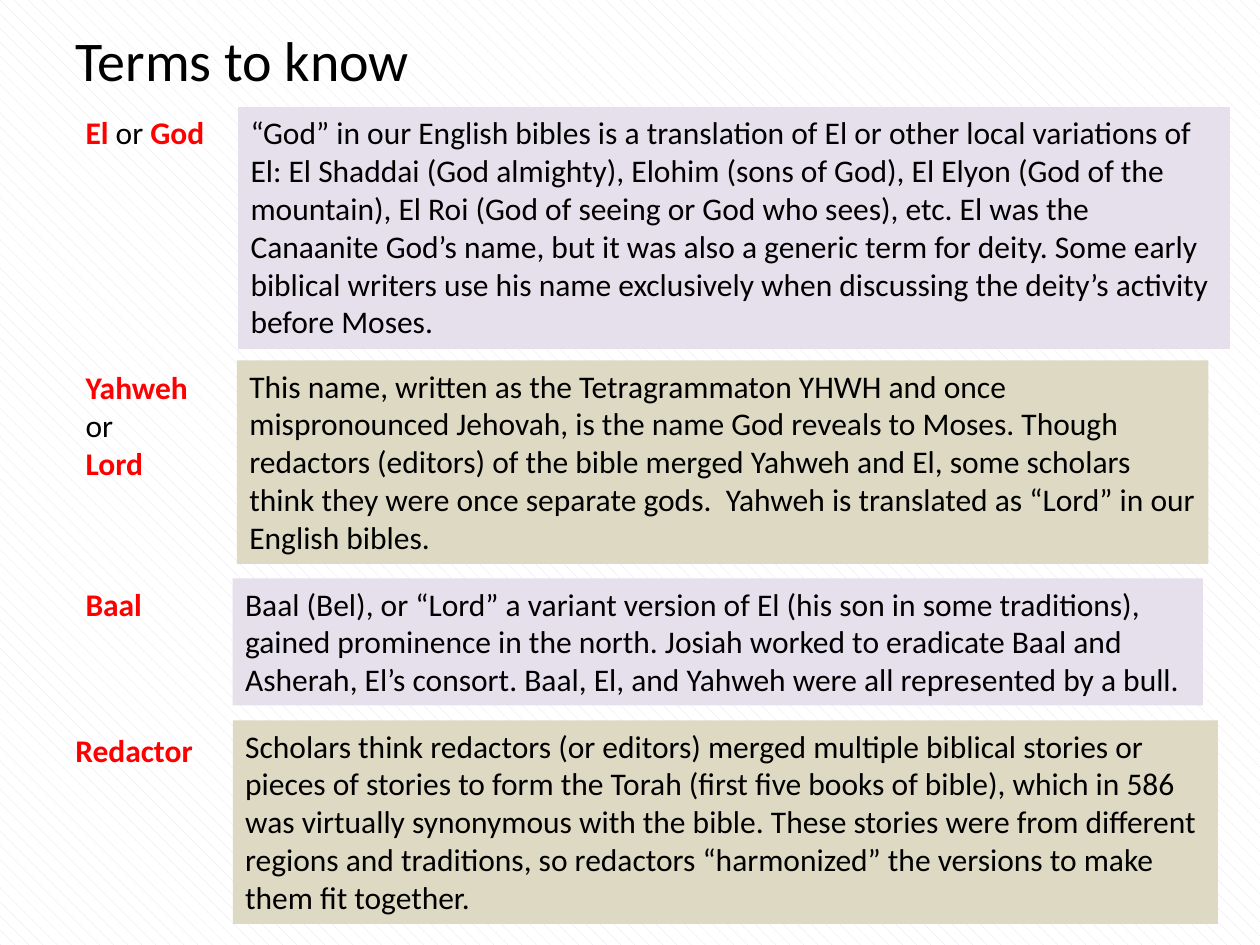
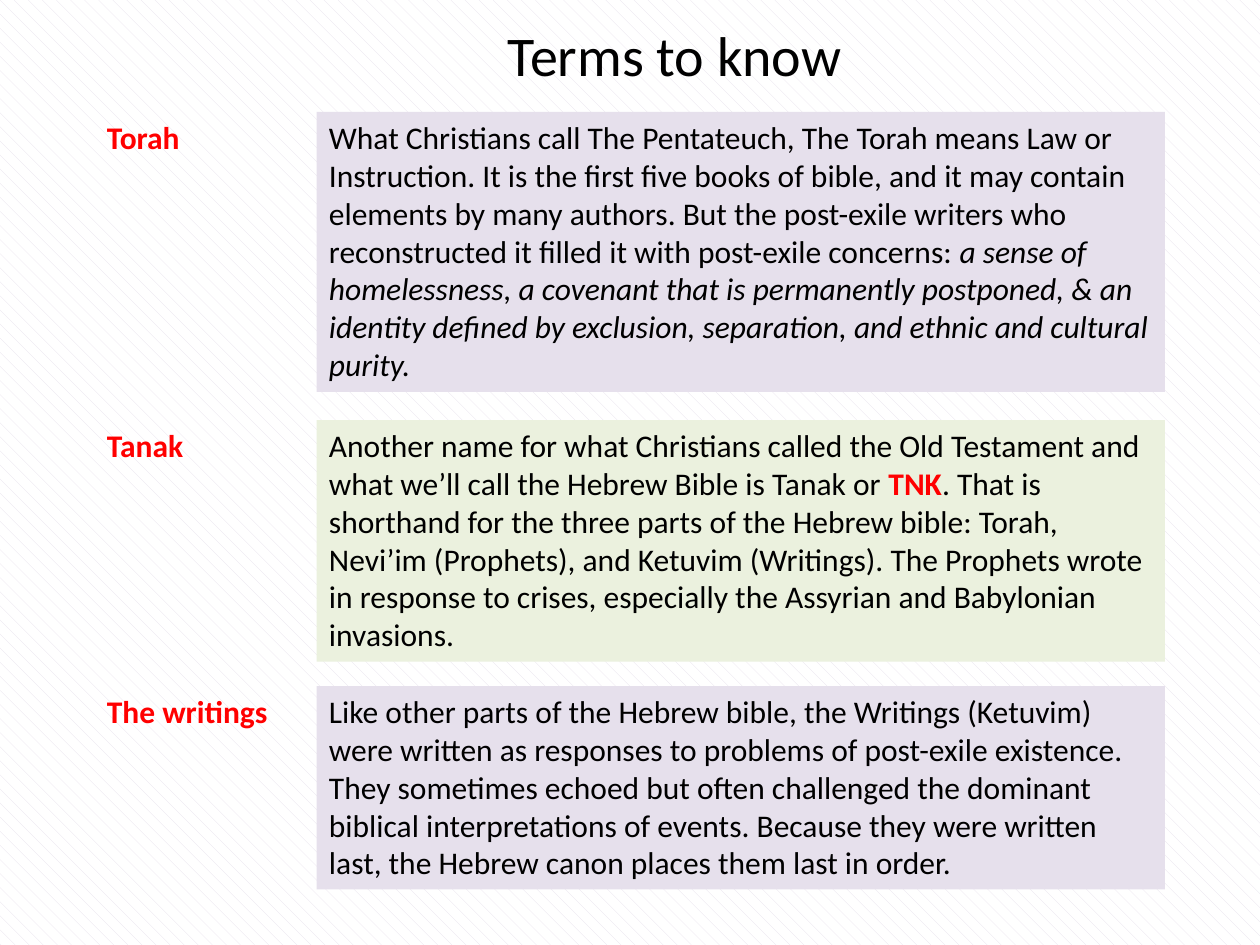
from pptx import Presentation
from pptx.dml.color import RGBColor
from pptx.enum.dml import MSO_PATTERN
from pptx.enum.text import MSO_AUTO_SIZE
from pptx.util import Pt

BLACK = RGBColor(0x00, 0x00, 0x00)
RED = RGBColor(0xFF, 0x00, 0x00)
WHITE = RGBColor(0xFF, 0xFF, 0xFF)
LAVENDER = RGBColor(0xE6, 0xE0, 0xEC)
TAN = RGBColor(0xDD, 0xD9, 0xC3)
SAGE = RGBColor(0xEB, 0xF1, 0xDE)

FONT = "Calibri"
BODY_SIZE = 18
LINE_HEIGHT = 21.82
VERTICAL_INSETS = 7.2
TERM = {"bold": True, "color": RED}
ITALIC = {"italic": True}


def add_run(paragraph, text, size=BODY_SIZE, color=BLACK, bold=False, italic=False):
    """Append formatted text to a paragraph."""
    run = paragraph.add_run()
    run.text = text
    run.font.name = FONT
    run.font.size = Pt(size)
    run.font.color.rgb = color
    run.font.bold = bold
    run.font.italic = italic


def add_text(slide, paragraphs, left, top, width, height, fill=None, wrap=True):
    """Place paragraphs, each a list of (text, format) runs, in a box."""
    box = slide.shapes.add_textbox(Pt(left), Pt(top), Pt(width), Pt(height))
    if fill is not None:
        box.fill.solid()
        box.fill.fore_color.rgb = fill
    frame = box.text_frame
    frame.word_wrap = wrap
    frame.auto_size = MSO_AUTO_SIZE.SHAPE_TO_FIT_TEXT
    for index, runs in enumerate(paragraphs):
        paragraph = frame.add_paragraph() if index else frame.paragraphs[0]
        for text, style in runs:
            add_run(paragraph, text, **style)


def block_height(lines):
    """Return the height of a box holding the given number of body lines."""
    return round(VERTICAL_INSETS + lines * LINE_HEIGHT, 2)


def add_term(slide, paragraphs, left, top, width, lines=1, wrap=True):
    """Add the term on the left of a row."""
    add_text(slide, paragraphs, left, top, width, block_height(lines), wrap=wrap)


def add_definition(slide, paragraphs, left, top, width, lines, fill, wrap=True):
    """Add the tinted definition on the right of a row."""
    add_text(slide, paragraphs, left, top, width, block_height(lines), fill, wrap)


def add_terms_slide(deck, title_left, title_top, title_width):
    """Add a slide with the shared background and title."""
    slide = deck.slides.add_slide(deck.slide_layouts[6])
    backdrop = slide.background.fill
    backdrop.patterned()
    backdrop.pattern = MSO_PATTERN.SHINGLE
    backdrop.fore_color.rgb = LAVENDER
    backdrop.back_color.rgb = WHITE
    add_text(slide, [[("Terms to know", {"size": 32})]],
             title_left, title_top, title_width, 46)
    return slide


def build_deities(deck):
    """Build the slide on divine names and redactors."""
    slide = add_terms_slide(deck, 36, 10.8, 229.7)

    add_term(slide, [[("El ", TERM), ("or ", {}), ("God", TERM)]], 41.8, 61.2, 86.4)
    add_definition(slide, [[(
        "“God” in our English bibles is a translation of El or other local variations "
        "of El: El Shaddai (God almighty), Elohim (sons of God), El Elyon (God of the "
        "mountain), El Roi (God of seeing or God who sees), etc. El was the Canaanite "
        "God’s name, but it was also a generic term for deity. Some early biblical "
        "writers use his name exclusively when discussing the deity’s activity before "
        "Moses.", {})]], 136.1, 61.2, 566.7, 6, LAVENDER)

    add_term(slide, [[("Yahweh", TERM), (" or", {})], [("Lord", TERM)]],
             41.8, 206.7, 85.7, lines=3)
    add_definition(slide, [[(
        "This name, written as the Tetragrammaton YHWH and once mispronounced Jehovah, "
        "is the name God reveals to Moses. Though redactors (editors) of the bible "
        "merged Yahweh and El, some scholars think they were once separate gods.  "
        "Yahweh is translated as “Lord” in our English bibles.", {})]],
        135.4, 205.9, 555.1, 5, TAN)

    add_term(slide, [[("Baal", TERM)]], 41.8, 330.5, 46.8, wrap=False)
    baal_lines = (
        "Baal (Bel), or “Lord” a variant version of El (his son in some traditions),",
        "gained prominence in the north. Josiah worked to eradicate Baal and",
        "Asherah, El’s consort. Baal, El, and Yahweh were all represented by a bull.",
    )
    add_definition(slide, [[(line, {})] for line in baal_lines],
                   133, 330.5, 554.4, 3, LAVENDER, wrap=False)

    add_term(slide, [[("Redactor", TERM)]], 36, 414, 100)
    add_definition(slide, [[(
        "Scholars think redactors (or editors) merged multiple biblical stories or "
        "pieces of stories to form the Torah (first five books of bible), which in 586 "
        "was virtually synonymous with the bible. These stories were from different "
        "regions and traditions, so redactors “harmonized” the versions to make them "
        "fit together.", {})]], 133, 411.7, 563, 5, TAN)


def build_scriptures(deck):
    """Build the slide on the parts of the Hebrew bible."""
    slide = add_terms_slide(deck, 283, 7.9, 207.4)
    torah = [
        ("What Christians call The Pentateuch, The Torah means Law or Instruction. It "
         "is the first five books of bible, and it may contain elements by many "
         "authors. But the post-exile writers who reconstructed it filled it with "
         "post-exile concerns: ", {}),
        ("a sense of homelessness, a covenant that is permanently postponed, & an "
         "identity defined by exclusion, separation, and ethnic and cultural purity.",
         ITALIC),
    ]
    tanak = [
        ("Another name for what Christians called the Old Testament and what we’ll "
         "call the Hebrew Bible is Tanak or ", {}),
        ("TNK", TERM),
        (". That is shorthand for the three parts of the Hebrew bible: Torah, Nevi’im "
         "(Prophets), and Ketuvim (Writings). The Prophets wrote in response to "
         "crises, especially the Assyrian and Babylonian invasions.", {}),
    ]
    writings = [
        ("Like other parts of the Hebrew bible, the Writings (Ketuvim) were written as "
         "responses to problems of post-exile existence. They sometimes echoed but "
         "often challenged the dominant biblical interpretations of events. Because "
         "they were written last, the Hebrew canon places them last in order.", {}),
    ]
    rows = (
        ("Torah", 56.2, torah, 64, 7, LAVENDER),
        ("Tanak", 58.3, tanak, 240, 6, SAGE),
        ("The writings", 107.3, writings, 392, 5, LAVENDER),
    )
    for term, term_width, definition, top, lines, fill in rows:
        add_term(slide, [[(term, TERM)]], 54, top, term_width, wrap=False)
        add_definition(slide, [definition], 180.9, top, 484.7, lines, fill)


def main():
    """Build and save the presentation."""
    deck = Presentation()
    deck.slide_width = Pt(720)
    deck.slide_height = Pt(540)
    build_deities(deck)
    build_scriptures(deck)
    deck.save("out.pptx")


if __name__ == "__main__":
    main()
